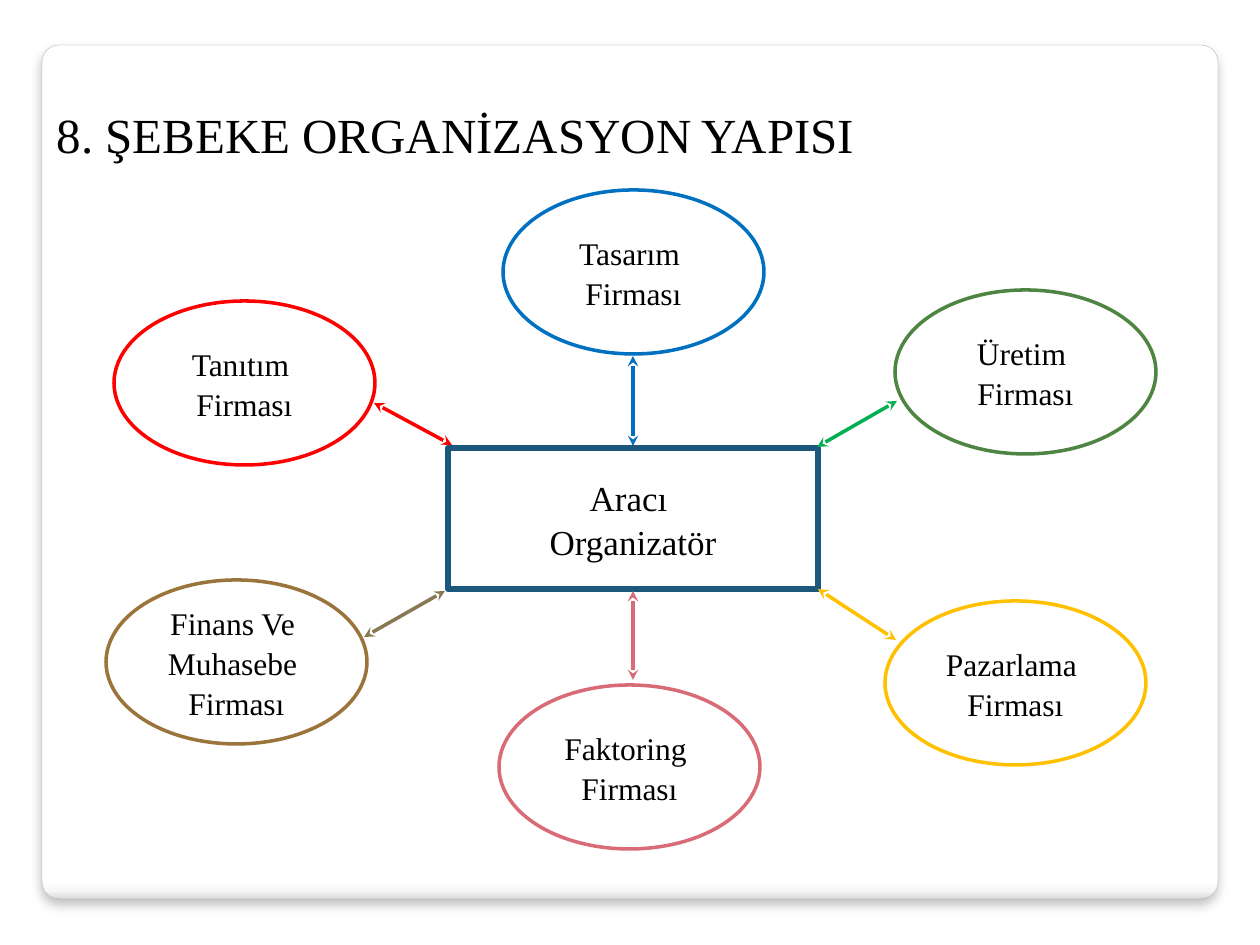
from lxml import etree
from pptx import Presentation
from pptx import util as u
from pptx.dml.color import RGBColor
from pptx.enum import shapes, text
from pptx.oxml import parse_xml
from pptx.oxml.ns import nsdecls, qn

SCALE = 914400 / 126
FONT = "Times New Roman"
FIRM_SIZE = (261, 164)

# left, top, outline colour, lines of text
FIRMS = [
    (503, 190, "0070C0", ["Tasarım ", "Firması"]),
    (895, 290, "4E8542", ["Üretim ", "Firması"]),
    (114, 301, "FF0000", ["Tanıtım ", "Firması"]),
    (885, 601, "FFC000", ["Pazarlama ", "Firması"]),
    (106, 580, "9A743A", ["Finans Ve ", "Muhasebe ", "Firması"]),
    (499, 685, "D96B77", ["Faktoring ", "Firması"]),
]

# start x, start y, end x, end y, colour
ARROWS = [
    (633, 356, 633, 446, "0070C0"),
    (633, 591, 633, 680, "D96B77"),
    (374, 403, 452, 445, "FF0000"),
    (364, 637, 445, 591, "887952"),
    (897, 401, 817, 447, "00B050"),
    (818, 589, 896, 640, "FFC000"),
]


def px(*lengths):
    return [u.Emu(round(length * SCALE)) for length in lengths]


def color(value):
    return RGBColor.from_string(value)


def set_values(target, values):
    for name, value in values.items():
        setattr(target, name, value)


def set_line(line, value, width):
    line.color.rgb = color(value)
    line.width = u.Pt(width)


def format_font(font, size):
    set_values(font, {"name": FONT, "size": u.Pt(size), "bold": False})
    font.color.rgb = color("000000")


def add_panel(slide):
    """Add the rounded sheet with its shaded lower edge and soft shadow."""
    panel = slide.shapes.add_shape(
        shapes.MSO_SHAPE.ROUNDED_RECTANGLE, *px(42, 45, 1176, 854))
    panel.adjustments[0] = 0.02
    set_line(panel.line, "A4A4A4", 0.16)
    stops = [(0, "FFFFFF"), (98, "FFFFFF"), (99, "F7F7F7"), (100, "DADADA")]
    stop_xml = "".join(
        f'<a:gs pos="{position * 1000}"><a:srgbClr val="{value}"/></a:gs>'
        for position, value in stops)
    properties = panel.element.spPr
    properties.find(qn("a:prstGeom")).addnext(parse_xml(
        f'<a:gradFill {nsdecls("a")}><a:gsLst>{stop_xml}</a:gsLst>'
        '<a:lin ang="5400000" scaled="0"/></a:gradFill>'))
    properties.append(parse_xml(
        f'<a:effectLst {nsdecls("a")}>'
        f'<a:outerShdw blurRad="{u.Pt(6)}" dist="{u.Pt(4)}" dir="5400000">'
        '<a:srgbClr val="000000"><a:alpha val="25000"/></a:srgbClr>'
        '</a:outerShdw></a:effectLst>'))
    return panel


def add_title(slide, panel, wording):
    title = slide.shapes.title
    panel.element.addnext(title.element)
    left, top, width, height = px(44, 92, 834, 63)
    set_values(title, {"left": left, "top": top,
                       "width": width, "height": height})
    frame = title.text_frame
    frame.text = wording
    set_values(frame, {"margin_top": px(12)[0], "margin_bottom": 0,
                       "word_wrap": False,
                       "auto_size": text.MSO_AUTO_SIZE.NONE,
                       "vertical_anchor": text.MSO_ANCHOR.TOP})
    paragraph = frame.paragraphs[0]
    paragraph.alignment = text.PP_ALIGN.LEFT
    format_font(paragraph.runs[0].font, 28)


def add_node(slide, kind, box, outline, line_width, lines, size):
    """Add an outlined shape with centred lines of text."""
    node = slide.shapes.add_shape(kind, *px(*box))
    node.shadow.inherit = False
    node.fill.solid()
    node.fill.fore_color.rgb = color("FFFFFF")
    set_line(node.line, outline, line_width)
    frame = node.text_frame
    set_values(frame, {"word_wrap": False,
                       "vertical_anchor": text.MSO_ANCHOR.MIDDLE})
    frame.text = "\n".join(lines)
    for paragraph in frame.paragraphs:
        set_values(paragraph, {"alignment": text.PP_ALIGN.CENTER,
                               "line_spacing": 1.05})
        format_font(paragraph.runs[0].font, size)


def add_arrow(slide, start_x, start_y, end_x, end_y, value):
    arrow = slide.shapes.add_connector(
        shapes.MSO_CONNECTOR.STRAIGHT, *px(start_x, start_y, end_x, end_y))
    set_line(arrow.line, value, 2)
    properties = arrow.element.spPr
    line = properties.find(qn("a:ln"))
    for end in ("a:headEnd", "a:tailEnd"):
        etree.SubElement(line, qn(end), type="stealth")
    etree.SubElement(properties, qn("a:effectLst"))


def main():
    presentation = Presentation()
    presentation.slide_width, presentation.slide_height = px(1260, 945)
    slide = presentation.slides.add_slide(presentation.slide_layouts[5])
    panel = add_panel(slide)
    add_title(slide, panel, "8. ŞEBEKE ORGANİZASYON YAPISI")
    for left, top, outline, lines in FIRMS:
        add_node(slide, shapes.MSO_SHAPE.OVAL, (left, top, *FIRM_SIZE),
                 outline, 2, lines, 18)
    add_node(slide, shapes.MSO_SHAPE.RECTANGLE, (448, 448, 370, 141),
             "1B587C", 3.35, ["Aracı ", "Organizatör"], 20)
    for arrow in ARROWS:
        add_arrow(slide, *arrow)
    presentation.save("out.pptx")


if __name__ == "__main__":
    main()
